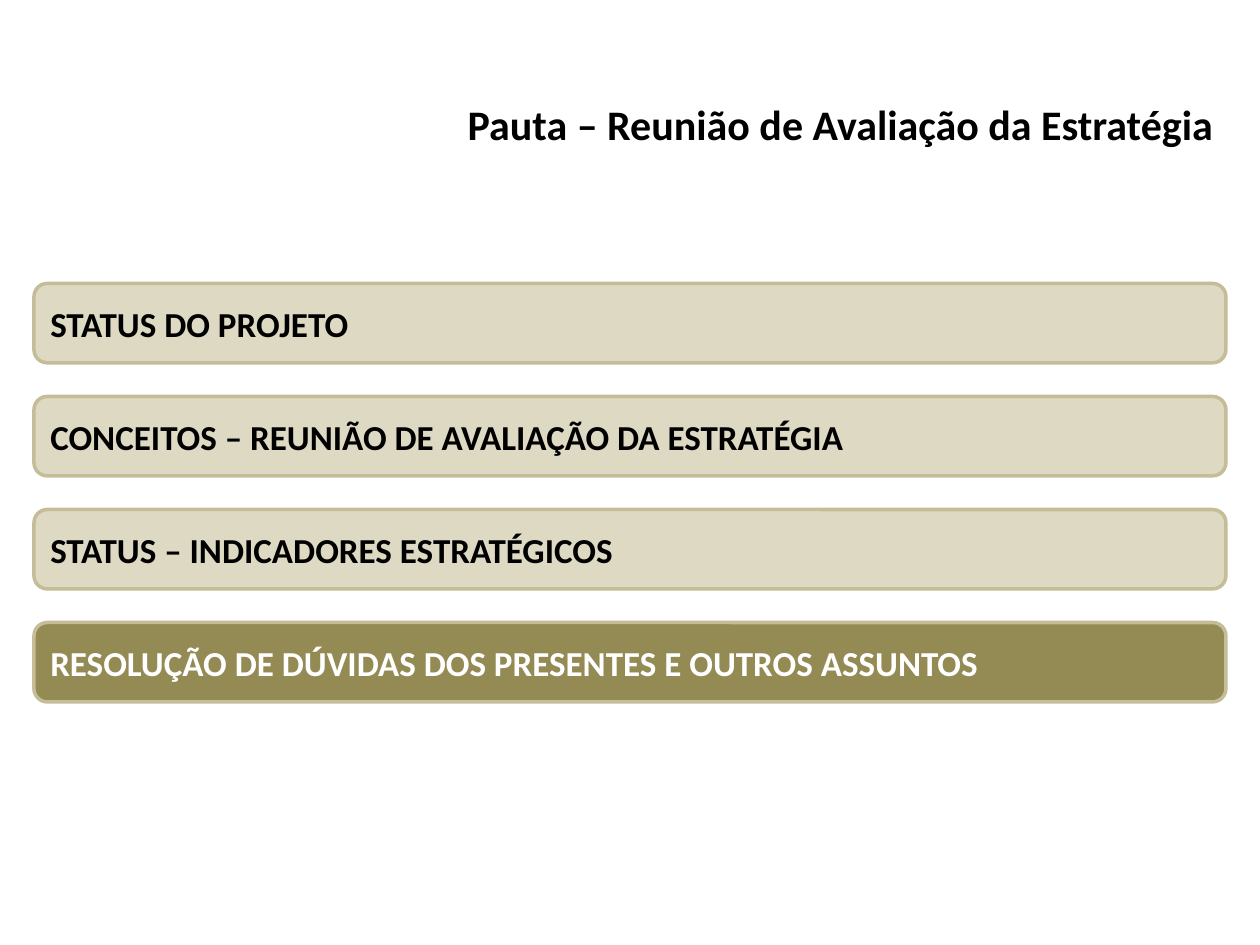
from dataclasses import dataclass

from pptx import Presentation
from pptx.dml.color import RGBColor
from pptx.enum.shapes import MSO_SHAPE
from pptx.enum.text import MSO_ANCHOR, PP_ALIGN
from pptx.util import Inches, Pt

HEADING = "Pauta – Reunião de Avaliação da Estratégia"
AGENDA = [
    "STATUS DO PROJETO",
    "CONCEITOS – REUNIÃO DE AVALIAÇÃO DA ESTRATÉGIA",
    "STATUS – INDICADORES ESTRATÉGICOS",
    "RESOLUÇÃO DE DÚVIDAS DOS PRESENTES E OUTROS ASSUNTOS",
]
CURRENT = 3


@dataclass(frozen=True)
class Theme:
    font: str = "Calibri"
    heading_size: int = 24
    item_size: int = 20
    ink: str = "000000"
    current_ink: str = "FFFFFF"
    bar: str = "DDD9C3"
    current_bar: str = "948A54"
    border: str = "C4BD97"
    border_width: int = 2


THEME = Theme()
SLIDE_W, SLIDE_H = 10, 7.5
MARGIN = 0.27
CONTENT_W = SLIDE_W - 2 * MARGIN
HEADING_TOP, HEADING_H = 0.73, 0.5
BAR_TOP, BAR_H, BAR_STEP = 2.25, 0.63, 0.897


def write(shape, text, size, color, align):
    frame = shape.text_frame
    frame.word_wrap = True
    frame.vertical_anchor = MSO_ANCHOR.MIDDLE
    paragraph = frame.paragraphs[0]
    paragraph.alignment = align
    run = paragraph.add_run()
    run.text = text
    run.font.name = THEME.font
    run.font.size = Pt(size)
    run.font.bold = True
    run.font.color.rgb = RGBColor.from_string(color)


def add_heading(slide):
    heading = slide.shapes.title
    heading.left, heading.top = Inches(MARGIN), Inches(HEADING_TOP)
    heading.width, heading.height = Inches(CONTENT_W), Inches(HEADING_H)
    write(heading, HEADING, THEME.heading_size, THEME.ink, PP_ALIGN.RIGHT)


def add_agenda_bar(slide, index, item):
    current = index == CURRENT
    bar = slide.shapes.add_shape(
        MSO_SHAPE.ROUNDED_RECTANGLE,
        Inches(MARGIN), Inches(BAR_TOP + index * BAR_STEP),
        Inches(CONTENT_W), Inches(BAR_H),
    )
    bar.shadow.inherit = False
    bar.fill.solid()
    bar.fill.fore_color.rgb = RGBColor.from_string(
        THEME.current_bar if current else THEME.bar)
    bar.line.color.rgb = RGBColor.from_string(THEME.border)
    bar.line.width = Pt(THEME.border_width)
    ink = THEME.current_ink if current else THEME.ink
    write(bar, item, THEME.item_size, ink, PP_ALIGN.JUSTIFY)


def main():
    deck = Presentation()
    deck.slide_width, deck.slide_height = Inches(SLIDE_W), Inches(SLIDE_H)
    slide = deck.slides.add_slide(deck.slide_layouts[5])
    add_heading(slide)
    for index, item in enumerate(AGENDA):
        add_agenda_bar(slide, index, item)
    deck.save("out.pptx")


if __name__ == "__main__":
    main()
